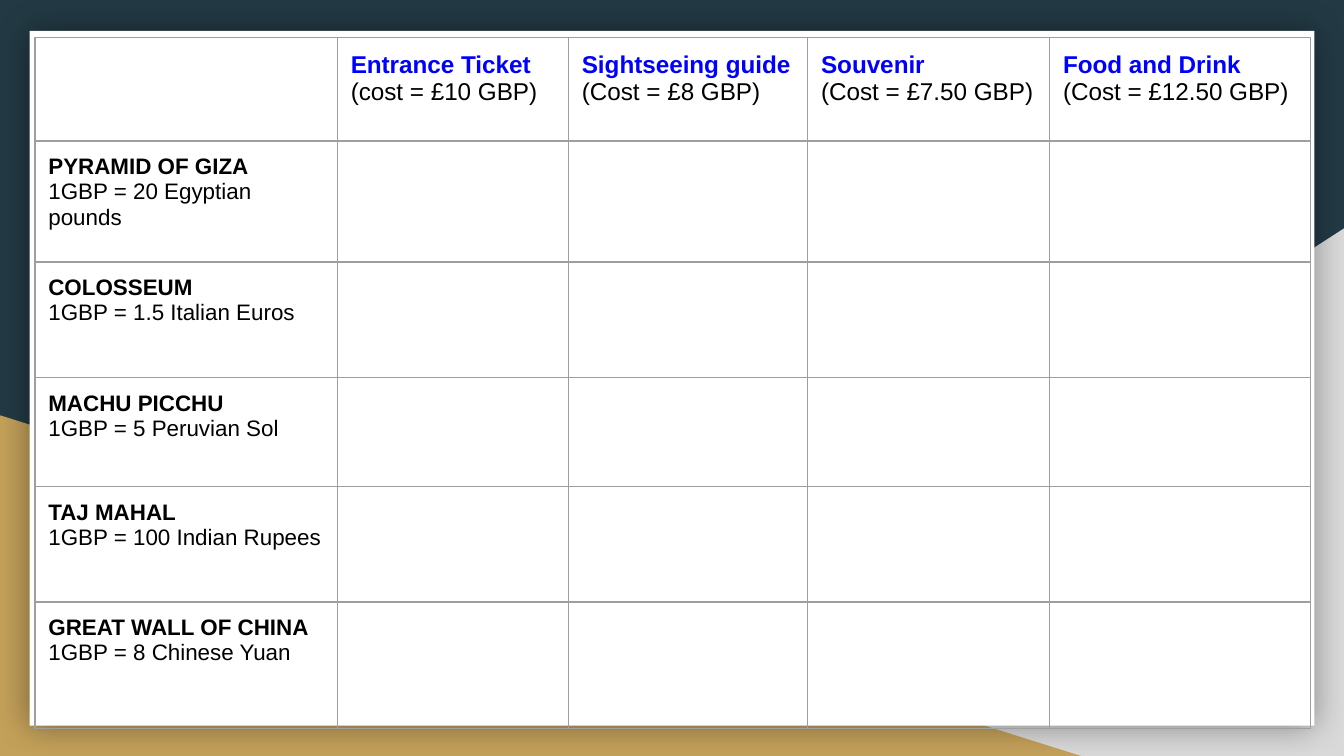
"""Build a worksheet slide for converting travel costs at world landmarks."""
from dataclasses import dataclass

from lxml.etree import SubElement
from pptx import Presentation
from pptx.dml.color import RGBColor
from pptx.enum.shapes import MSO_SHAPE
from pptx.oxml.ns import qn
from pptx.shapes.autoshape import Shape
from pptx.slide import Slide
from pptx.table import _Cell
from pptx.util import Inches, Pt


@dataclass(frozen=True)
class Theme:
    font: str = "Arial"
    background: str = "233A44"
    grey: str = "D9D9D9"
    gold: str = "C4A15A"
    panel: str = "FFFFFF"
    border: str = "9E9E9E"
    heading: str = "0000FF"
    text: str = "000000"
    heading_size: float = 13
    place_size: float = 12
    border_width: float = 0.75
    shadow_blur: float = 18
    shadow_opacity: int = 40


@dataclass(frozen=True)
class Backdrop:
    preset: MSO_SHAPE
    left: float
    top: float
    width: float
    height: float
    color: str
    flipped: bool = False
    shadowed: bool = False


@dataclass(frozen=True)
class Label:
    title: str
    detail: str
    one_paragraph: bool = False


THEME = Theme()
BACKDROPS = [
    Backdrop(MSO_SHAPE.RIGHT_TRIANGLE, 3.92, 1.7, 6.08, 3.93, THEME.grey, flipped=True),
    Backdrop(MSO_SHAPE.RIGHT_TRIANGLE, 0, 3.09, 8.06, 2.54, THEME.gold),
    Backdrop(MSO_SHAPE.RECTANGLE, 0.22, 0.23, 9.56, 5.17, THEME.panel, shadowed=True),
]
COSTS = [
    Label("Entrance Ticket", " (cost = £10 GBP)", one_paragraph=True),
    Label("Sightseeing guide", "(Cost = £8 GBP)"),
    Label("Souvenir", "(Cost = £7.50 GBP)"),
    Label("Food and Drink", "(Cost = £12.50 GBP)"),
]
PLACES = [
    Label("PYRAMID OF GIZA", "1GBP = 20 Egyptian pounds"),
    Label("COLOSSEUM", "1GBP = 1.5 Italian Euros"),
    Label("MACHU PICCHU", "1GBP = 5 Peruvian Sol"),
    Label("TAJ MAHAL", "1GBP = 100 Indian Rupees"),
    Label("GREAT WALL OF CHINA", "1GBP = 8 Chinese Yuan"),
]
TABLE_LEFT, TABLE_TOP = 0.26, 0.28
COLUMN_WIDTHS = [2.25, 1.72, 1.78, 1.8, 1.94]
ROW_HEIGHTS = [0.77, 0.9, 0.86, 0.81, 0.86, 0.94]
CELL_MARGIN = 0.1


def add_glow_shadow(shape: Shape) -> None:
    effects = shape._element.spPr.find(qn("a:effectLst"))
    shadow = SubElement(effects, qn("a:outerShdw"), blurRad=str(Pt(THEME.shadow_blur)),
                        dist="0", dir="0", algn="ctr", rotWithShape="0")
    color = SubElement(shadow, qn("a:srgbClr"), val=THEME.text)
    SubElement(color, qn("a:alpha"), val=str(THEME.shadow_opacity * 1000))


def add_backdrop(slide: Slide, backdrop: Backdrop) -> None:
    shape = slide.shapes.add_shape(
        backdrop.preset, Inches(backdrop.left), Inches(backdrop.top),
        Inches(backdrop.width), Inches(backdrop.height))
    shape.fill.solid()
    shape.fill.fore_color.rgb = RGBColor.from_string(backdrop.color)
    shape.line.fill.background()
    shape.shadow.inherit = False
    if backdrop.flipped:
        shape._element.spPr.xfrm.set("flipH", "1")
    if backdrop.shadowed:
        add_glow_shadow(shape)


def style_cell(cell: _Cell) -> None:
    cell.margin_left = cell.margin_right = Inches(CELL_MARGIN)
    cell.margin_top = cell.margin_bottom = Inches(CELL_MARGIN)
    properties = cell._tc.get_or_add_tcPr()
    for side in ("a:lnL", "a:lnR", "a:lnT", "a:lnB"):
        line = SubElement(properties, qn(side), w=str(Pt(THEME.border_width)))
        fill = SubElement(line, qn("a:solidFill"))
        SubElement(fill, qn("a:srgbClr"), val=THEME.border)
    cell.fill.background()


def write_label(cell: _Cell, label: Label, size: float, title_color: str) -> None:
    frame = cell.text_frame
    title_paragraph = frame.paragraphs[0]
    detail_paragraph = title_paragraph if label.one_paragraph else frame.add_paragraph()
    for paragraph, text, color, bold in (
            (title_paragraph, label.title, title_color, True),
            (detail_paragraph, label.detail, THEME.text, False)):
        paragraph.font.name = THEME.font
        paragraph.font.size = Pt(size)
        run = paragraph.add_run()
        run.text = text
        run.font.bold = bold
        run.font.color.rgb = RGBColor.from_string(color)


def add_cost_table(slide: Slide) -> None:
    table = slide.shapes.add_table(
        len(ROW_HEIGHTS), len(COLUMN_WIDTHS), Inches(TABLE_LEFT), Inches(TABLE_TOP),
        Inches(sum(COLUMN_WIDTHS)), Inches(sum(ROW_HEIGHTS))).table
    table.first_row = table.horz_banding = False
    for column, width in zip(table.columns, COLUMN_WIDTHS):
        column.width = Inches(width)
    for row, height in zip(table.rows, ROW_HEIGHTS):
        row.height = Inches(height)
    for cell in table.iter_cells():
        style_cell(cell)
    for index, label in enumerate(COSTS, start=1):
        write_label(table.cell(0, index), label, THEME.heading_size, THEME.heading)
    for index, label in enumerate(PLACES, start=1):
        write_label(table.cell(index, 0), label, THEME.place_size, THEME.text)


def main() -> None:
    presentation = Presentation()
    presentation.slide_width = Inches(10)
    presentation.slide_height = Inches(10 * 9 / 16)
    slide = presentation.slides.add_slide(presentation.slide_layouts[6])
    slide.background.fill.solid()
    slide.background.fill.fore_color.rgb = RGBColor.from_string(THEME.background)
    for backdrop in BACKDROPS:
        add_backdrop(slide, backdrop)
    add_cost_table(slide)
    presentation.save("out.pptx")


if __name__ == "__main__":
    main()
